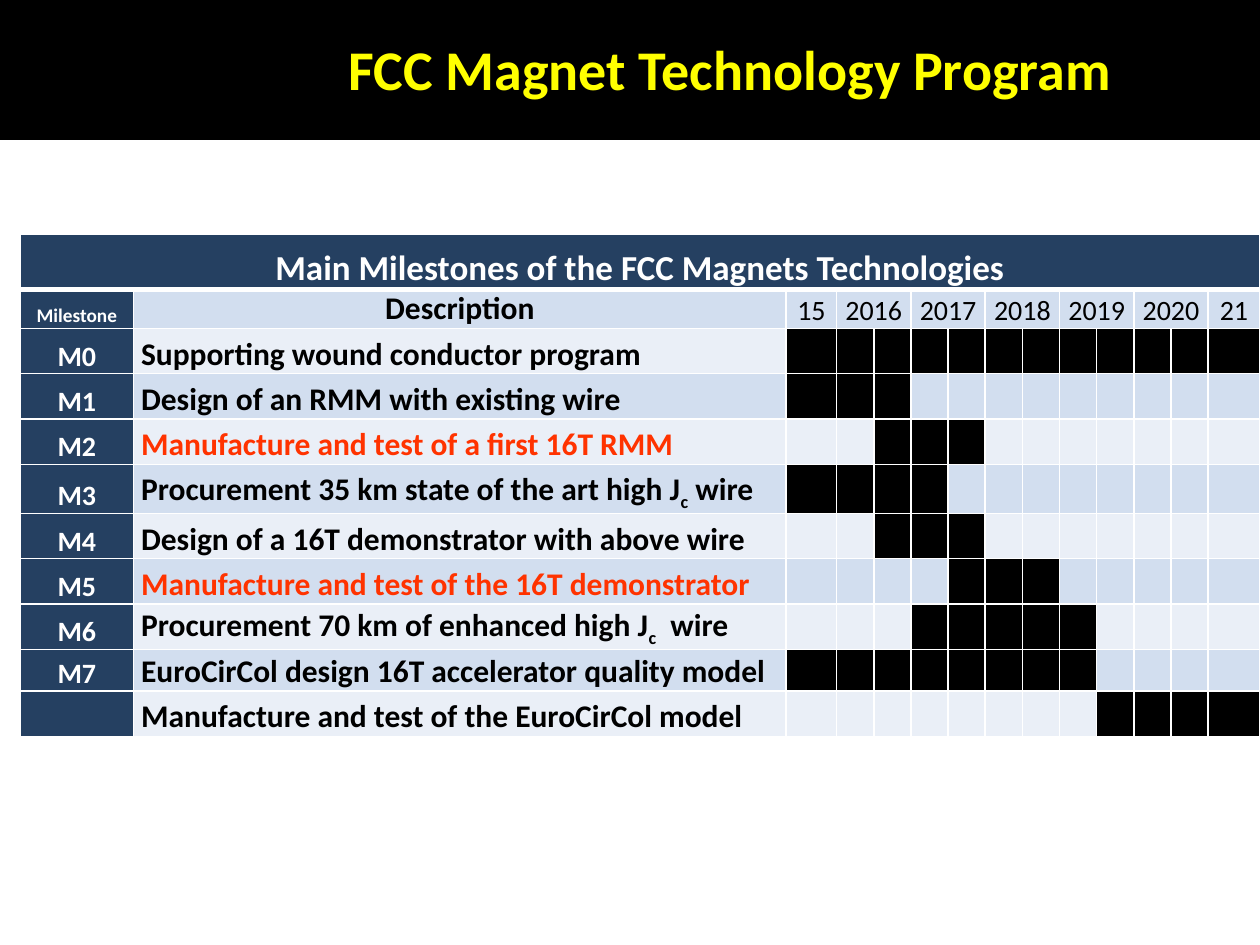
from dataclasses import dataclass

from lxml import etree
from pptx import Presentation
from pptx.dml.color import RGBColor
from pptx.enum import text
from pptx.oxml import ns
from pptx.util import Inches, Pt


@dataclass(frozen=True)
class Theme:
    font: str = "Calibri"
    black: str = "000000"
    white: str = "FFFFFF"
    yellow: str = "FFFF00"
    red: str = "FF3300"
    navy: str = "254061"
    bands: tuple[str, str] = ("EAEFF7", "D2DEEF")
    title_size: int = 32
    heading_size: int = 20
    description_size: int = 18
    label_size: int = 16
    small_size: int = 11


@dataclass(frozen=True)
class Milestone:
    code: str
    description: str
    first: int
    last: int
    height: float = 0.36
    highlighted: bool = False
    subscript: str = ""
    ending: str = ""


THEME = Theme()
CENTER = text.PP_ALIGN.CENTER
PERIODS = 12
HALF_YEAR = 2.95 / 10
COLUMN_WIDTHS = [0.9, 5.18, 0.4] + [HALF_YEAR] * 10 + [0.41]
HEADER_HEIGHTS = [0.44, 0.29]
MILESTONES = [
    Milestone("M0", "Supporting wound conductor program", 0, 11),
    Milestone("M1", "Design of an RMM with existing wire", 0, 2),
    Milestone("M2", "Manufacture and test of a first 16T RMM", 2, 4, highlighted=True),
    Milestone("M3", "Procurement 35 km state of the art high J", 0, 3, 0.39,
              subscript="c", ending=" wire"),
    Milestone("M4", "Design of a 16T demonstrator with above wire", 2, 4),
    Milestone("M5", "Manufacture and test of the 16T demonstrator", 4, 6, highlighted=True),
    Milestone("M6", "Procurement 70 km of enhanced high J", 3, 7,
              subscript="c", ending="  wire"),
    Milestone("M7", "EuroCirCol design 16T accelerator quality model", 0, 7, 0.33),
    Milestone("", "Manufacture and test of the EuroCirCol model", 8, 11),
]


def paint(fill, color: str) -> None:
    fill.solid()
    fill.fore_color.rgb = RGBColor.from_string(color)


def add_run(paragraph, words: str, size: int, color: str, bold: bool = True,
            baseline: int = 0) -> None:
    run = paragraph.add_run()
    run.text = words
    run.font.name = THEME.font
    run.font.size = Pt(size)
    run.font.bold = bold
    run.font.color.rgb = RGBColor.from_string(color)
    if baseline:
        run._r.get_or_add_rPr().set("baseline", str(baseline))


def set_borders(cell, top: float, bottom: float) -> None:
    properties = cell._tc.get_or_add_tcPr()
    widths = {"lnL": 1, "lnR": 1, "lnT": top, "lnB": bottom}
    for position, (side, width) in enumerate(widths.items()):
        line = etree.Element(ns.qn(f"a:{side}"), w=str(Pt(width)))
        fill = etree.SubElement(line, ns.qn("a:solidFill"))
        etree.SubElement(fill, ns.qn("a:srgbClr"), val=THEME.white)
        properties.insert(position, line)


def format_cell(cell, color: str, top: float = 1, bottom: float = 1) -> None:
    cell.margin_left = cell.margin_right = Inches(0.06)
    cell.margin_top = cell.margin_bottom = 0
    cell.vertical_anchor = text.MSO_ANCHOR.BOTTOM
    paint(cell.fill, color)
    set_borders(cell, top, bottom)


def write_label(cell, words: str, size: int, color: str, bold: bool = True) -> None:
    paragraph = cell.text_frame.paragraphs[0]
    paragraph.alignment = CENTER
    add_run(paragraph, words, size, color, bold)


def fill_headers(table) -> None:
    for column in range(len(COLUMN_WIDTHS)):
        format_cell(table.cell(0, column), THEME.navy, bottom=3)
        format_cell(table.cell(1, column), THEME.bands[1] if column else THEME.navy, top=3)
    table.cell(0, 0).merge(table.cell(0, len(COLUMN_WIDTHS) - 1))
    write_label(table.cell(0, 0), "Main Milestones of the FCC Magnets Technologies",
                THEME.heading_size, THEME.white)
    write_label(table.cell(1, 0), "Milestone", THEME.small_size, THEME.white)
    write_label(table.cell(1, 1), "Description", THEME.description_size, THEME.black)
    years = {2: "15", 13: "21"}
    for index, year in enumerate(range(2016, 2021)):
        column = 3 + 2 * index
        table.cell(1, column).merge(table.cell(1, column + 1))
        years[column] = str(year)
    for column, year in years.items():
        write_label(table.cell(1, column), year, THEME.label_size, THEME.black, bold=False)


def fill_milestone(table, row: int, milestone: Milestone) -> None:
    band = THEME.bands[row % 2]
    label, description = table.cell(row, 0), table.cell(row, 1)
    format_cell(label, THEME.navy)
    format_cell(description, band)
    if milestone.code:
        write_label(label, milestone.code, THEME.label_size, THEME.white)
    color = THEME.red if milestone.highlighted else THEME.black
    paragraph = description.text_frame.paragraphs[0]
    add_run(paragraph, milestone.description, THEME.description_size, color)
    if milestone.subscript:
        add_run(paragraph, milestone.subscript, THEME.description_size, color, baseline=-25000)
        add_run(paragraph, milestone.ending, THEME.description_size, color)
    for period in range(PERIODS):
        active = milestone.first <= period <= milestone.last
        format_cell(table.cell(row, 2 + period), THEME.black if active else band)


def add_schedule(slide) -> None:
    heights = HEADER_HEIGHTS + [milestone.height for milestone in MILESTONES]
    table = slide.shapes.add_table(
        len(heights), len(COLUMN_WIDTHS), Inches(0.16), Inches(1.86),
        Inches(sum(COLUMN_WIDTHS)), Inches(sum(heights))).table
    table.first_row = table.horz_banding = False
    for column, width in zip(table.columns, COLUMN_WIDTHS):
        column.width = Inches(width)
    for row, height in zip(table.rows, heights):
        row.height = Inches(height)
    fill_headers(table)
    for row, milestone in enumerate(MILESTONES, start=len(HEADER_HEIGHTS)):
        fill_milestone(table, row, milestone)


def add_title(slide) -> None:
    title = slide.shapes.title
    title.left, title.top = Inches(0), Inches(-0.03)
    title.width, title.height = Inches(10.01), Inches(1.14)
    paint(title.fill, THEME.black)
    frame = title.text_frame
    frame.auto_size = text.MSO_AUTO_SIZE.NONE
    frame.vertical_anchor = text.MSO_ANCHOR.MIDDLE
    frame.margin_left, frame.margin_right = Inches(1.68), Inches(0.1)
    frame.margin_top = frame.margin_bottom = 0
    paragraph = frame.paragraphs[0]
    paragraph.alignment = CENTER
    add_run(paragraph, "FCC Magnet Technology Program", THEME.title_size, THEME.yellow)


def main() -> None:
    presentation = Presentation()
    presentation.slide_width, presentation.slide_height = Inches(10), Inches(7.5)
    slide = presentation.slides.add_slide(presentation.slide_layouts.get_by_name("Title Only"))
    add_title(slide)
    add_schedule(slide)
    presentation.save("out.pptx")


if __name__ == "__main__":
    main()
